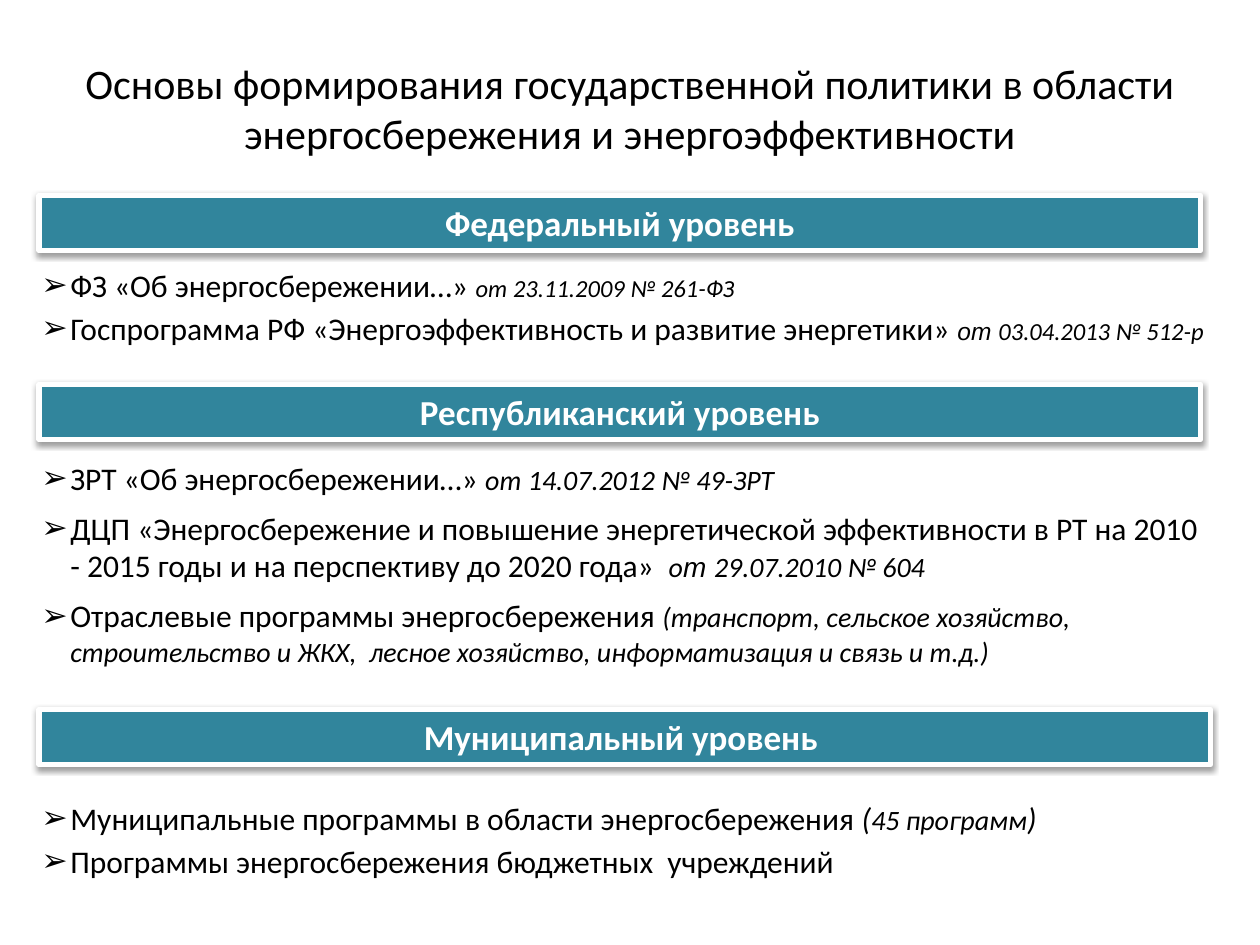
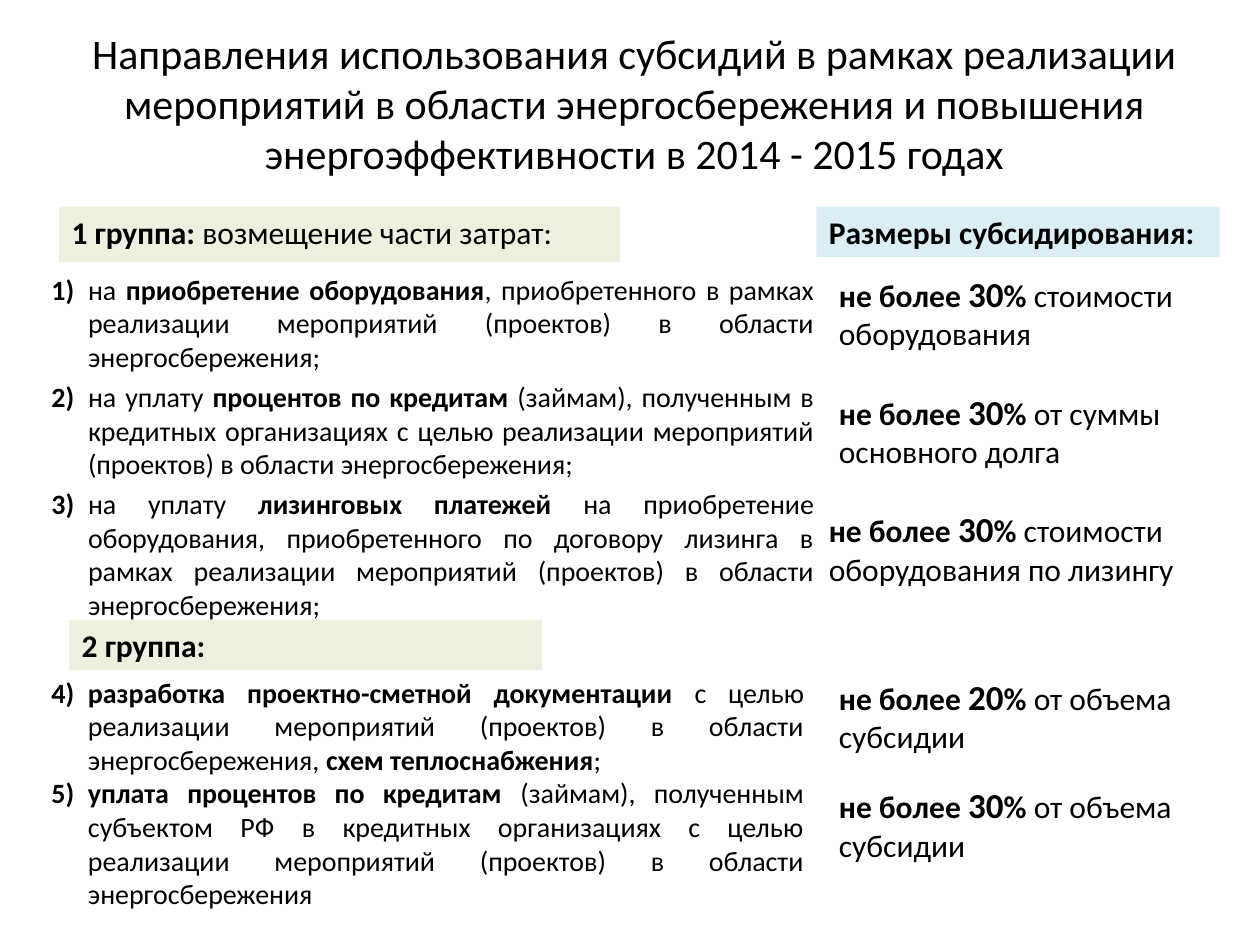
from lxml import etree
from pptx import Presentation
from pptx import util as u
from pptx.dml.color import RGBColor
from pptx.enum import shapes, text
from pptx.oxml import parse_xml
from pptx.oxml.ns import nsdecls, qn

TEAL, GREEN, BLUE = "31859C", "EBF1DE", "DBEEF4"
WHITE, BLACK = "FFFFFF", "000000"
FONT = "Calibri"
LEFT, CENTER, JUSTIFY = (text.PP_ALIGN.LEFT, text.PP_ALIGN.CENTER,
                         text.PP_ALIGN.JUSTIFY)
TITLE_ONLY = 5
BAND_SHADOW = (
    f'<a:effectLst {nsdecls("a")}><a:outerShdw blurRad="40000" dist="20000" '
    'dir="5400000" rotWithShape="0"><a:srgbClr val="000000">'
    '<a:alpha val="38000"/></a:srgbClr></a:outerShdw></a:effectLst>')


def rgb(value):
    return RGBColor.from_string(value)


def emphasis(line, size=18):
    """Turn a line with *bold* parts into spans."""
    return [(part, size, "b" if index % 2 else "")
            for index, part in enumerate(line.split("*")) if part]


class SlideBuilder:
    def __init__(self):
        self.deck = Presentation()
        self.deck.slide_width = u.Inches(10)
        self.deck.slide_height = u.Inches(7.5)
        self.page = None

    def new_page(self, title, *area):
        self.page = self.deck.slides.add_slide(
            self.deck.slide_layouts[TITLE_ONLY])
        box = self.page.shapes.title
        box.left, box.top, box.width, box.height = map(u.Inches, area)
        frame = box.text_frame
        frame.auto_size = text.MSO_AUTO_SIZE.NONE
        frame.vertical_anchor = text.MSO_ANCHOR.MIDDLE
        self.fill_frame(frame, [[(title, 24, "")]], align=CENTER)

    def fill_frame(self, frame, lines, align=LEFT, color=BLACK, hanging=0,
                   bullet=None, before=0, spacing=None):
        """Fill a frame; each line is a list of (text, size, style[, font])."""
        frame.word_wrap = True
        for index, spans in enumerate(lines):
            para = frame.add_paragraph() if index else frame.paragraphs[0]
            para.alignment = align
            para.space_before = u.Pt(before)
            if spacing:
                para.line_spacing = spacing
            for words, size, style, *font in spans:
                span = para.add_run()
                span.text = words
                span.font.name = font[0] if font else FONT
                span.font.size = u.Pt(size)
                span.font.bold = "b" in style
                span.font.italic = "i" in style
                span.font.color.rgb = rgb(color)
            if hanging:
                self.hang(para, hanging, bullet)

    @staticmethod
    def hang(para, hanging, bullet):
        properties = para._p.get_or_add_pPr()
        properties.set("marL", str(u.Inches(hanging)))
        properties.set("indent", str(-u.Inches(hanging)))
        if bullet:
            etree.SubElement(properties, qn("a:buFont")).set("typeface", "Arial")
            etree.SubElement(properties, qn("a:buChar")).set("char", bullet)

    def panel(self, area, lines, fill=None, line=None, **style):
        """Rectangle with text; line is its white border width in points."""
        box = self.page.shapes.add_shape(
            shapes.MSO_SHAPE.RECTANGLE, *map(u.Inches, area))
        box.shadow.inherit = False
        if fill:
            box.fill.solid()
            box.fill.fore_color.rgb = rgb(fill)
        else:
            box.fill.background()
        if line:
            box.line.color.rgb = rgb(WHITE)
            box.line.width = u.Pt(line)
        else:
            box.line.fill.background()
        box.text_frame.vertical_anchor = text.MSO_ANCHOR.TOP
        self.fill_frame(box.text_frame, lines, **style)
        return box

    def level_band(self, top, width, name):
        box = self.panel((0.31, top, width, 0.44), [[(name, 20, "b")]],
                         fill=TEAL, line=3, align=CENTER, color=WHITE)
        properties = box._element.spPr
        properties.replace(properties.find(qn("a:effectLst")),
                           parse_xml(BAND_SHADOW))

    def bullets(self, area, lines, **style):
        self.panel(area, lines, line=0.75, hanging=0.23, bullet="➢", **style)

    def textbox(self, area, lines, **style):
        box = self.page.shapes.add_textbox(*map(u.Inches, area))
        self.fill_frame(box.text_frame, lines, **style)

    def numbered(self, area, lines, **style):
        self.textbox(area, [emphasis(line, 16) for line in lines],
                     align=JUSTIFY, hanging=0.29, **style)

    def share(self, left, top, percent, base):
        self.textbox((left, top, 3.13, 0.74), [[
            ("не более ", 18, "b"), (percent, 20, "b"), ("% ", 18, "b"),
            (base, 18, "")]])


def policy_page(builder):
    builder.new_page("Основы формирования государственной политики в области "
                     "энергосбережения и энергоэффективности",
                     0.31, 0.23, 9.38, 1.25)
    builder.bullets((0.23, 2.02, 9.53, 0.79), [
        [("ФЗ «Об энергосбережении…» ", 18, ""),
         ("от 23.11.2009 № 261-ФЗ", 14, "i")],
        [("Госпрограмма РФ «Энергоэффективность и развитие энергетики» ", 18, ""),
         ("от ", 14, "i", "Arial"), ("03.04.2013 № 512-р", 14, "i")],
    ], spacing=1.14)
    for top, width, name in [(1.55, 9.22, "Федеральный уровень"),
                             (3.05, 9.22, "Республиканский уровень"),
                             (5.63, 9.3, "Муниципальный уровень ")]:
        builder.level_band(top, width, name)
    builder.bullets((0.23, 3.59, 9.45, 1.78), [
        [("ЗРТ «Об энергосбережении…» ", 18, ""),
         ("от 14.07.2012 № 49-ЗРТ", 16, "i")],
        [("ДЦП «Энергосбережение и повышение энергетической эффективности в РТ "
          "на 2010 - 2015 годы и на перспективу до 2020 года»  ", 18, ""),
         ("о", 16, "i"), ("т ", 16, "i", "Arial"),
         ("29.07.2010 № 604", 16, "i")],
        [("Отраслевые программы энергосбережения ", 18, ""),
         ("(транспорт, сельское хозяйство, строительство и ЖКХ,  лесное "
          "хозяйство, информатизация и связь и т.д.)", 16, "i")],
    ], before=7)
    builder.bullets((0.23, 6.25, 9.38, 0.79), [
        [("Муниципальные программы в области энергосбережения ", 18, ""),
         ("(", 18, "i"), ("45 программ", 16, "i"), (")", 18, "i")],
        [("Программы энергосбережения бюджетных  учреждений", 18, "")],
    ], spacing=1.14)


def subsidy_page(builder):
    builder.new_page("Направления использования субсидий в рамках реализации "
                     "мероприятий в области энергосбережения и повышения "
                     "энергоэффективности в 2014 - 2015 годах",
                     0.31, 0.3, 9.45, 1.03)
    builder.numbered((0.31, 2.11, 6.25, 2.89), [
        "*1)*\tна *приобретение оборудования*, приобретенного в рамках "
        "реализации мероприятий (проектов) в области энергосбережения;",
        "*2)*\tна уплату *процентов по кредитам *(займам), полученным в "
        "кредитных организациях с целью реализации мероприятий (проектов) "
        "в области энергосбережения;",
        "*3)*\tна уплату *лизинговых платежей *на приобретение оборудования, "
        "приобретенного по договору лизинга в рамках реализации мероприятий "
        "(проектов) в области энергосбережения;",
    ], before=3.8)
    for area, fill, heading in [
            ((6.48, 1.64, 3.2, 0.4), BLUE, "*Размеры субсидирования:*"),
            ((0.47, 1.64, 4.45, 0.44), GREEN,
             "*1 группа: *возмещение части затрат:"),
            ((0.55, 4.92, 3.75, 0.4), GREEN, "*2 группа:*")]:
        builder.panel(area, [emphasis(heading)], fill=fill)
    for left, top, percent, base in [
            (6.56, 2.11, "30", "стоимости оборудования"),
            (6.56, 3.05, "30", "от суммы основного долга"),
            (6.48, 3.98, "30", "стоимости оборудования по лизингу"),
            (6.56, 5.31, "20", "от объема субсидии"),
            (6.56, 6.17, "30", "от объема субсидии")]:
        builder.share(left, top, percent, base)
    builder.numbered((0.31, 5.31, 6.17, 1.99), [
        "*4)\tразработка проектно-сметной документации *с целью реализации "
        "мероприятий (проектов) в области энергосбережения, "
        "*схем теплоснабжения*;",
        "*5)\tуплата процентов по кредитам *(займам), полученным субъектом РФ "
        "в кредитных организациях с целью реализации мероприятий (проектов) "
        "в области энергосбережения",
    ])


def main():
    builder = SlideBuilder()
    policy_page(builder)
    subsidy_page(builder)
    builder.deck.save("out.pptx")


if __name__ == "__main__":
    main()
